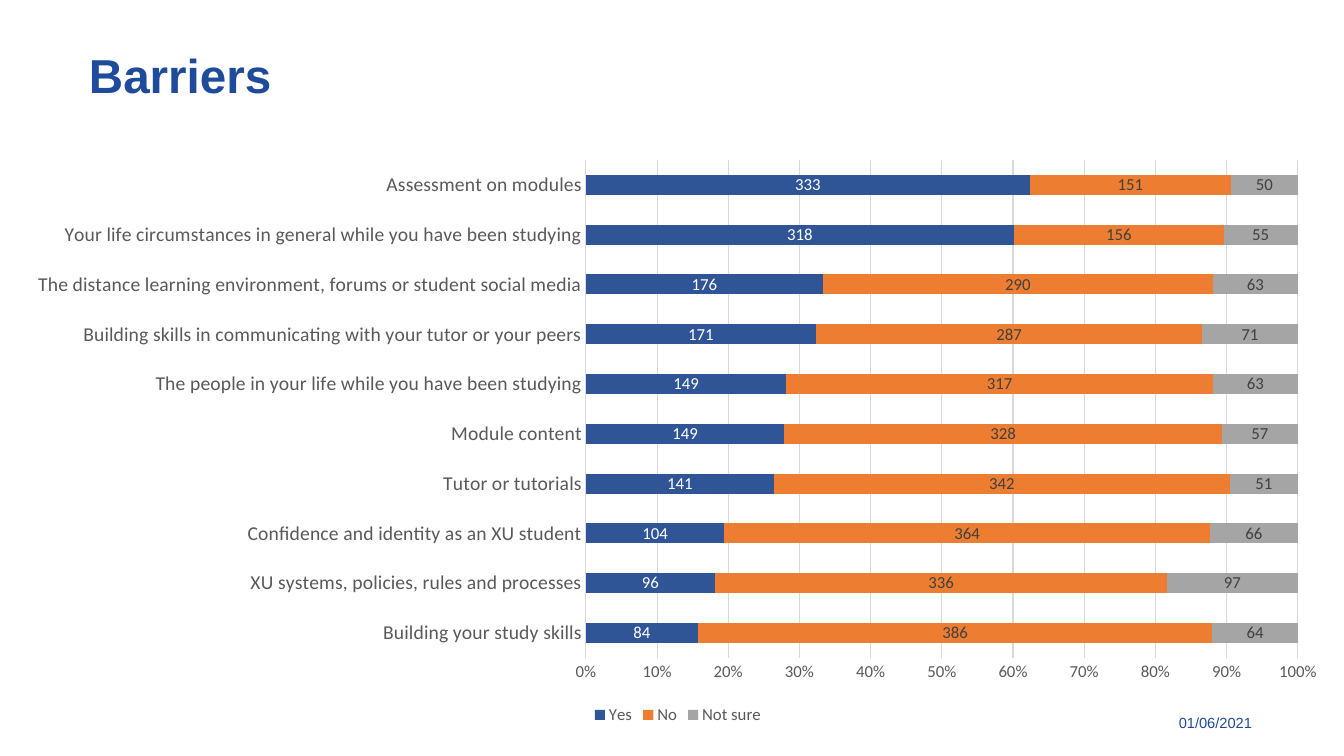
from lxml.etree import fromstring
from pptx import Presentation
from pptx.chart.data import CategoryChartData
from pptx.dml.color import RGBColor
from pptx.enum.chart import XL_CHART_TYPE, XL_LEGEND_POSITION, XL_TICK_MARK
from pptx.enum.text import PP_ALIGN
from pptx.util import Pt

PX = 914400 / 100.8
THEME = {
    "heading_font": "Arial", "chart_font": "Calibri",
    "blue": "1E4B9B", "grey": "595959", "rule": "D9D9D9",
    "title": 34, "date": 10.5, "category": 14, "label": 12,
}
SERIES = [
    ("Yes", "2F5597", "FFFFFF", (84, 96, 104, 141, 149, 149, 171, 176, 318, 333)),
    ("No", "ED7D31", "404040", (386, 336, 364, 342, 328, 317, 287, 290, 156, 151)),
    ("Not sure", "A5A5A5", "404040", (64, 97, 66, 51, 57, 63, 71, 63, 55, 50)),
]
BARRIERS = [
    "Building your study skills",
    "XU systems, policies, rules and processes",
    "Confidence and identity as an XU student",
    "Tutor or tutorials",
    "Module content",
    "The people in your life while you have been studying",
    "Building skills in communicating with your tutor or your peers",
    "The distance learning environment, forums or student social media",
    "Your life circumstances in general while you have been studying",
    "Assessment on modules",
]
CHART_BOX = (12, 148, 1332, 581)
PLOT_BOX = (586, 160, 712, 498)


def emu(*lengths):
    return [round(length * PX) for length in lengths]


def style(font, size, color, name, bold=False):
    for key, value in {"size": Pt(size), "name": name, "bold": bold}.items():
        setattr(font, key, value)
    font.color.rgb = RGBColor.from_string(color)


presentation = Presentation()
presentation.slide_width, presentation.slide_height = emu(1344, 756)
slide = presentation.slides.add_slide(presentation.slide_layouts[6])

texts = [
    ("01/06/2021", (1116, 709, 146, 28), (10, 5, 10, 5), "date", False,
     {"alignment": PP_ALIGN.RIGHT}),
    ("Barriers", (85, 51, 876, 97), (4, 4, 2, 4), "title", True,
     {"line_spacing": 0.85, "space_before": Pt(10)}),
]
for text, box, insets, size, bold, formats in texts:
    frame = slide.shapes.add_textbox(*emu(*box)).text_frame
    frame.word_wrap = True
    for side, inset in zip(("left", "top", "right", "bottom"), emu(*insets)):
        setattr(frame, f"margin_{side}", inset)
    paragraph = frame.paragraphs[0]
    for key, value in formats.items():
        setattr(paragraph, key, value)
    run = paragraph.add_run()
    run.text = text
    style(run.font, THEME[size], THEME["blue"], THEME["heading_font"], bold)

chart_data = CategoryChartData(number_format="###0")
chart_data.categories = BARRIERS
for name, fill, label_color, values in SERIES:
    chart_data.add_series(name, values)
chart = slide.shapes.add_chart(
    XL_CHART_TYPE.BAR_STACKED_100, *emu(*CHART_BOX), chart_data).chart
chart.has_title = False
style(chart.font, 10, "000000", THEME["chart_font"])

plot = chart.plots[0]
for key, value in {"gap_width": 150, "overlap": 100, "vary_by_categories": False}.items():
    setattr(plot, key, value)
for series, (name, fill, label_color, values) in zip(plot.series, SERIES):
    series.format.fill.solid()
    series.format.fill.fore_color.rgb = RGBColor.from_string(fill)
    labels = series.data_labels
    for key, value in {"show_value": True, "number_format": "###0",
                       "number_format_is_linked": False}.items():
        setattr(labels, key, value)
    style(labels.font, THEME["label"], label_color, THEME["chart_font"])

for axis, size in ((chart.category_axis, "category"), (chart.value_axis, "label")):
    axis.major_tick_mark = axis.minor_tick_mark = XL_TICK_MARK.NONE
    style(axis.tick_labels.font, THEME[size], THEME["grey"], THEME["chart_font"])
value_axis = chart.value_axis
value_axis.has_major_gridlines = True
value_axis.format.line.fill.background()
value_axis.tick_labels.number_format = "0%"
value_axis.tick_labels.number_format_is_linked = False
for line in (chart.category_axis.format.line, value_axis.major_gridlines.format.line):
    line.width = Pt(0.75)
    line.color.rgb = RGBColor.from_string(THEME["rule"])

chart.has_legend = True
chart.legend.position = XL_LEGEND_POSITION.BOTTOM
chart.legend.include_in_layout = False
style(chart.legend.font, THEME["label"], THEME["grey"], THEME["chart_font"])

chart_left, chart_top, chart_width, chart_height = CHART_BOX
plot_left, plot_top, plot_width, plot_height = PLOT_BOX
fractions = {
    "x": (plot_left - chart_left) / chart_width,
    "y": (plot_top - chart_top) / chart_height,
    "w": plot_width / chart_width,
    "h": plot_height / chart_height,
}
modes = '<c:layoutTarget val="inner"/><c:xMode val="edge"/><c:yMode val="edge"/>'
sizes = "".join(f'<c:{key} val="{value:.4f}"/>' for key, value in fractions.items())
layout = fromstring(
    '<c:layout xmlns:c="http://schemas.openxmlformats.org/drawingml/2006/chart">'
    f"<c:manualLayout>{modes}{sizes}</c:manualLayout></c:layout>")
plot_area = chart.element.xpath(".//c:plotArea")[0]
for empty_layout in plot_area.xpath("c:layout"):
    plot_area.remove(empty_layout)
plot_area.insert(0, layout)

presentation.save("out.pptx")
